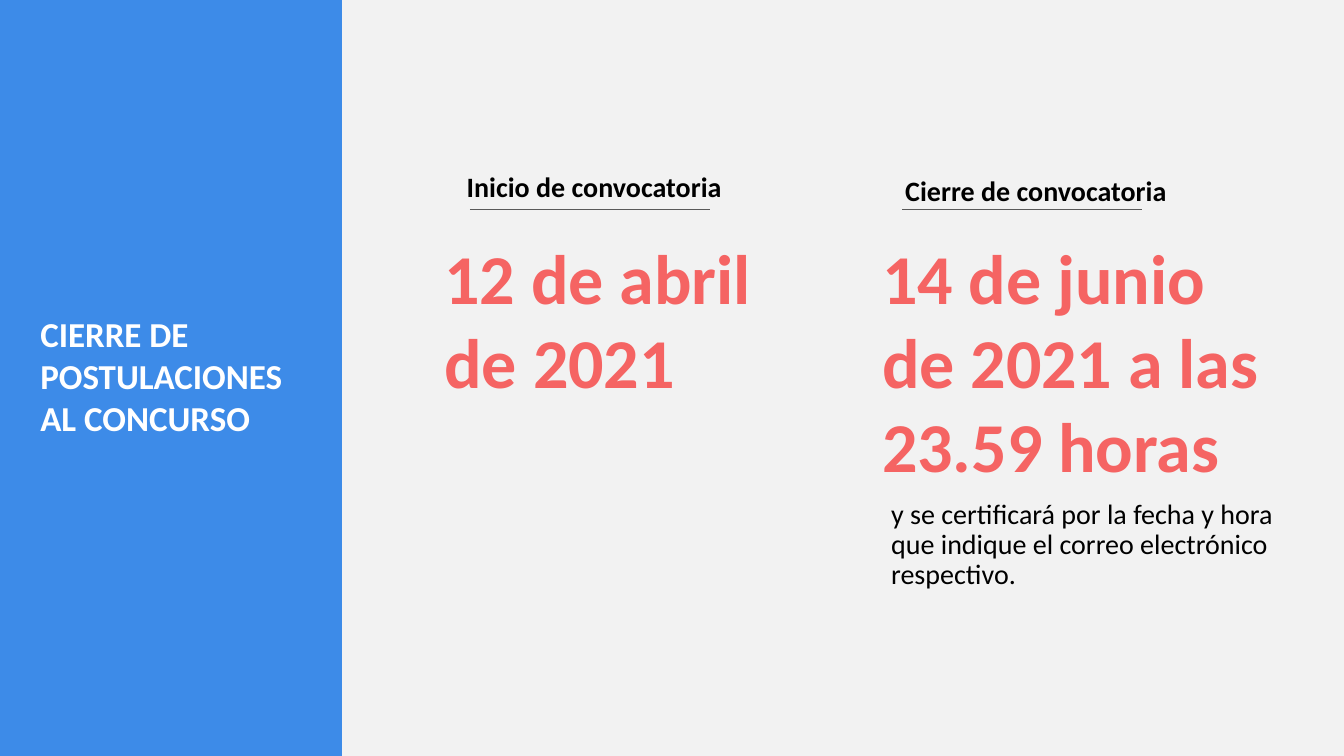
from pptx import Presentation
from pptx.dml.color import RGBColor
from pptx.enum.shapes import MSO_CONNECTOR, MSO_SHAPE
from pptx.enum.text import MSO_ANCHOR, MSO_AUTO_SIZE, PP_ALIGN
from pptx.oxml.ns import qn
from pptx.util import Inches, Pt
from lxml import etree

RECTANGLE = MSO_SHAPE.RECTANGLE
STRAIGHT = MSO_CONNECTOR.STRAIGHT
TOP = MSO_ANCHOR.TOP
LEFT = PP_ALIGN.LEFT
NO_AUTOFIT = MSO_AUTO_SIZE.NONE

BACKGROUND = RGBColor(0xF2, 0xF2, 0xF2)
BLUE = RGBColor(0x3D, 0x8B, 0xE8)
CORAL = RGBColor(0xF5, 0x64, 0x63)
GREY = RGBColor(0x59, 0x59, 0x59)
BLACK = RGBColor(0, 0, 0)
WHITE = RGBColor(0xFF, 0xFF, 0xFF)

TITLE_ONLY = 5
RULE_TOP = 2.08
RULE_WIDTH = 2.38


class SlideBuilder:
    font = "Calibri"

    def __init__(self, page):
        self.page = page
        page.background.fill.solid()
        page.background.fill.fore_color.rgb = BACKGROUND

    def fill_text(self, box, text, size, color, bold=True, wrap=True, spacing=1.0, before=0):
        frame = box.text_frame
        frame.text = text
        frame.word_wrap = wrap
        frame.auto_size = NO_AUTOFIT
        frame.vertical_anchor = TOP
        for paragraph in frame.paragraphs:
            paragraph.alignment = LEFT
            paragraph.line_spacing = spacing
            paragraph.space_before = Pt(before)
            for span in paragraph.runs:
                span.font.name = self.font
                span.font.size = Pt(size)
                span.font.bold = bold
                span.font.color.rgb = color

    def title(self, text, left, top, width, height):
        box = self.page.shapes.title
        box.left, box.top = Inches(left), Inches(top)
        box.width, box.height = Inches(width), Inches(height)
        self.fill_text(box, text, 25, WHITE)

    def text(self, text, left, top, width, height, size, color, **style):
        box = self.page.shapes.add_textbox(
            Inches(left), Inches(top), Inches(width), Inches(height))
        self.fill_text(box, text, size, color, **style)

    def side_panel(self, width, height):
        """Add a full-height panel behind everything else on the slide."""
        panel = self.page.shapes.add_shape(RECTANGLE, 0, 0, Inches(width), Inches(height))
        panel.shadow.inherit = False
        panel.fill.solid()
        panel.fill.fore_color.rgb = BLUE
        panel.line.fill.background()
        self.page.shapes.title.element.addprevious(panel.element)

    def rule(self, left):
        line = self.page.shapes.add_connector(
            STRAIGHT, Inches(left), Inches(RULE_TOP),
            Inches(left + RULE_WIDTH), Inches(RULE_TOP))
        line.line.color.rgb = GREY
        line.line.width = Pt(0.5)
        etree.SubElement(line.element.spPr, qn("a:effectLst"))

    def milestone(self, heading, heading_box, date, date_box, rule_left):
        self.text(heading, *heading_box, 20, BLACK, spacing=0.9, before=10)
        self.text(date, *date_box, 50, CORAL, wrap=False)
        self.rule(rule_left)


def main():
    deck = Presentation()
    deck.slide_width, deck.slide_height = Inches(13.33), Inches(7.5)
    builder = SlideBuilder(deck.slides.add_slide(deck.slide_layouts[TITLE_ONLY]))

    builder.side_panel(3.39, 7.5)
    builder.title("CIERRE DE POSTULACIONES\nAL CONCURSO", 0.3, 3.05, 3.61, 1.65)
    builder.milestone("Inicio de convocatoria", (4.53, 1.67, 3.52, 1.65),
                      "12 de abril\nde 2021", (4.31, 2.28, 3.43, 1.78), 4.66)
    builder.milestone("Cierre de convocatoria", (8.88, 1.71, 4.06, 1.65),
                      "14 de junio\nde 2021 a las\n23.59 horas", (8.65, 2.28, 3.97, 2.63), 8.95)
    builder.text("y se certificará por la fecha y hora que indique el correo electrónico respectivo.",
                 8.74, 4.91, 4.3, 1.1, 20, BLACK, bold=False, spacing=0.9, before=10)
    deck.save("out.pptx")


if __name__ == "__main__":
    main()
